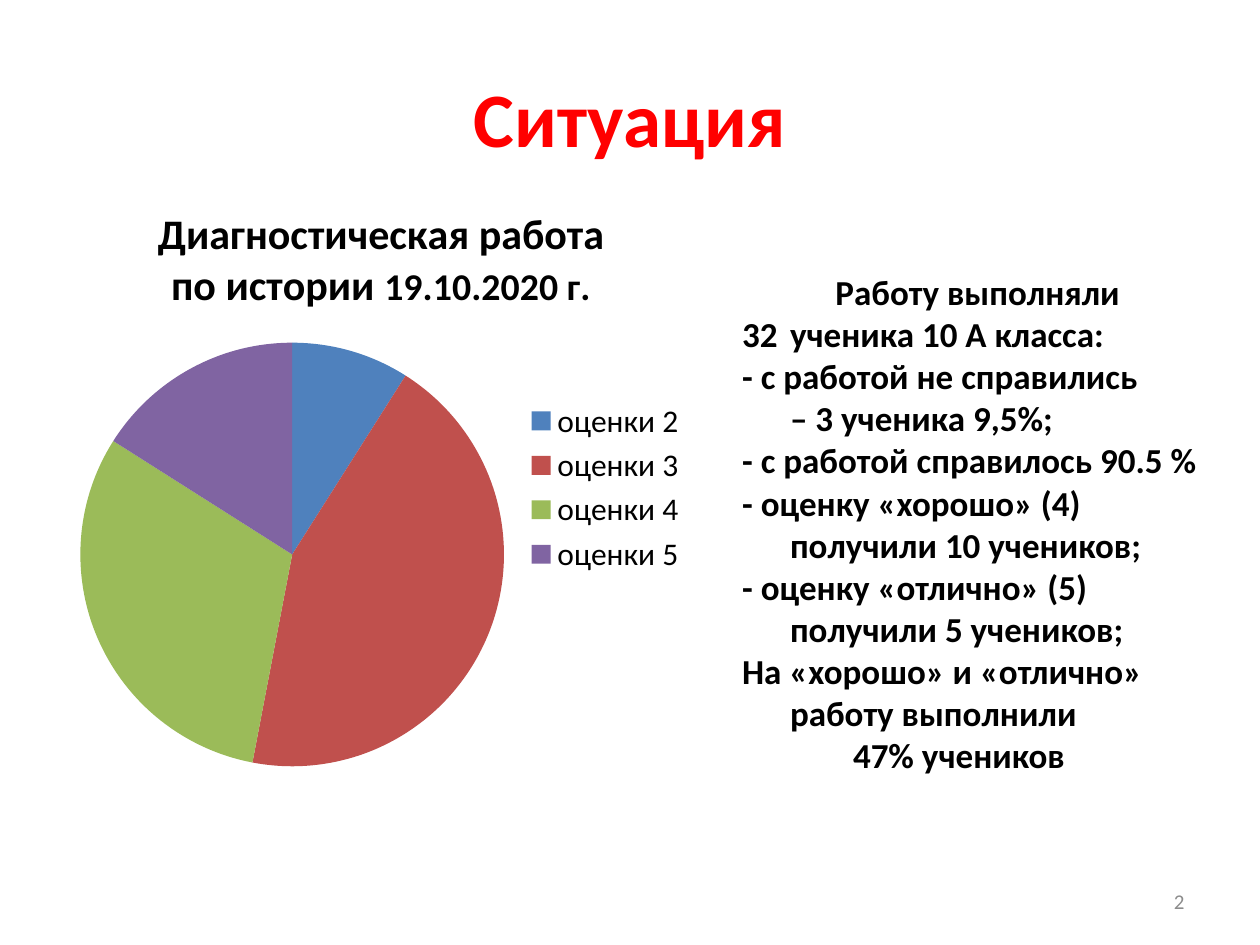
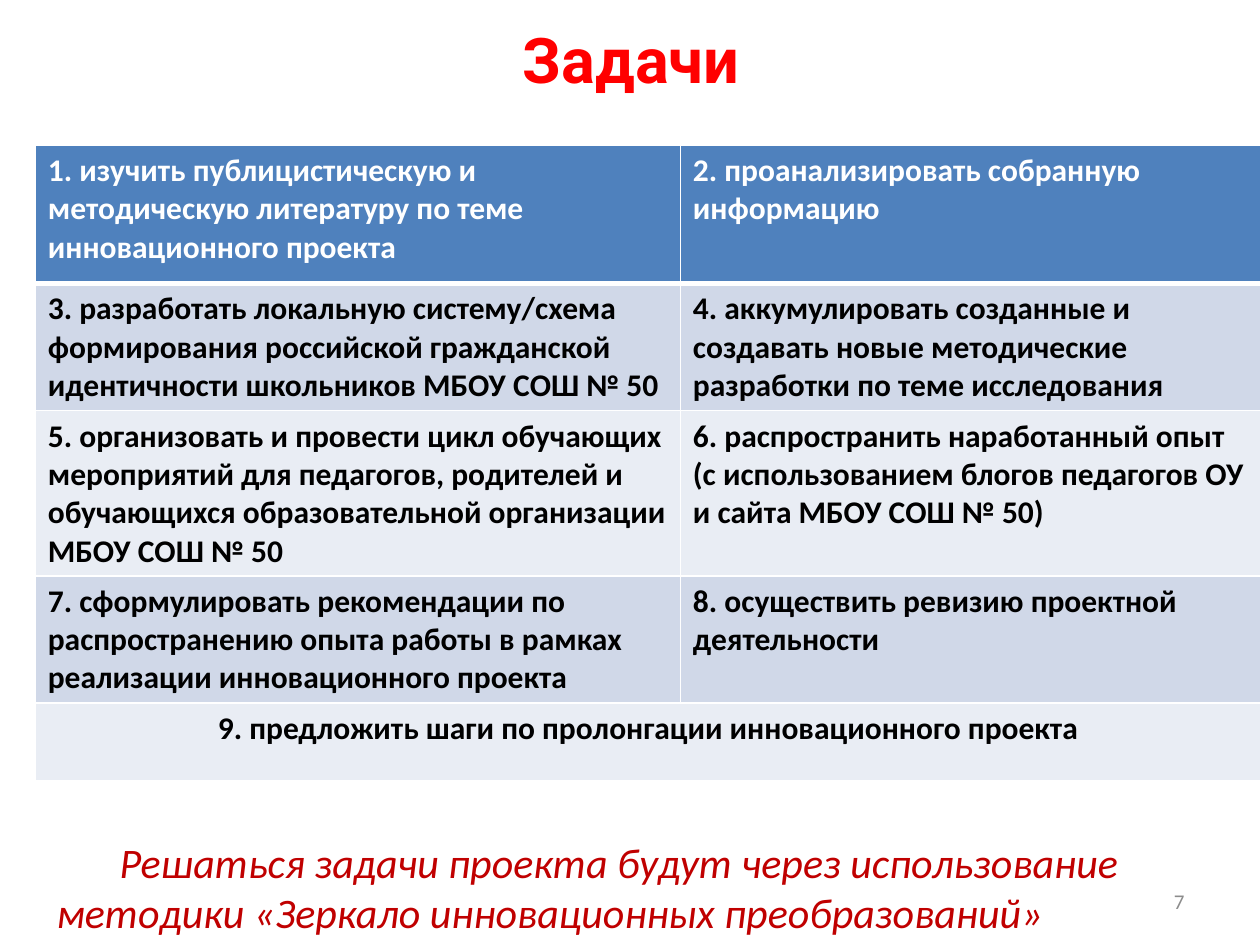
from dataclasses import dataclass

from lxml.etree import SubElement
from pptx import Presentation
from pptx.chart.data import CategoryChartData
from pptx.dml.color import RGBColor as RGB
from pptx.enum.chart import XL_CHART_TYPE as ChartType, XL_LEGEND_POSITION as LegendPos
from pptx.enum.text import MSO_ANCHOR as Anchor, MSO_AUTO_SIZE as AutoSize, PP_ALIGN as Align
from pptx.oxml.ns import qn
from pptx.util import Inches, Pt


@dataclass(frozen=True)
class Theme:
    font: str = "Calibri"
    alt_font: str = "Roboto"
    title: str = "FF0000"
    text: str = "000000"
    white: str = "FFFFFF"
    note: str = "C00000"
    page: str = "8C8C8C"
    header: str = "4F81BD"
    bands: tuple = ("D0D8E8", "E9EDF4")
    slices: tuple = ("4F81BD", "C0504D", "9BBB59", "8064A2")
    chart_title_size: float = 24
    chart_date_size: float = 21.6
    chart_size: float = 18
    list_size: float = 20
    table_size: float = 18
    note_size: float = 24
    page_size: float = 12


T = Theme()
TITLE_AND_BODY, TITLE_ONLY = 1, 5

RESULTS = {"оценки 2": 9, "оценки 3": 44, "оценки 4": 31, "оценки 5": 16}
SUMMARY_HEAD = "Работу выполняли"
PUPIL_COUNT = 32
SUMMARY = [
    "ученика 10 А класса:",
    "- с работой не справились",
    "\t– 3 ученика 9,5%;",
    "- с работой справилось 90.5 %",
    "- оценку «хорошо» (4)",
    "\tполучили 10 учеников;",
    "- оценку «отлично» (5)",
    "\tполучили 5 учеников;",
    "На «хорошо» и «отлично» работу выполнили",
    "\t\t47% учеников",
]
TASKS = [
    ("1. изучить публицистическую и методическую литературу по теме инновационного проекта",
     "2. проанализировать собранную информацию"),
    ("3. разработать локальную систему/схема формирования российской гражданской "
     "идентичности школьников МБОУ СОШ № 50",
     "4. аккумулировать созданные и создавать новые методические разработки по теме исследования"),
    ("5. организовать и провести цикл обучающих мероприятий для педагогов, родителей и "
     "обучающихся образовательной организации МБОУ СОШ № 50",
     "6. распространить наработанный опыт\n(с использованием блогов педагогов ОУ и сайта МБОУ СОШ № 50)"),
    ("7. сформулировать рекомендации по распространению опыта работы в рамках "
     "реализации инновационного проекта",
     "8. осуществить ревизию проектной деятельности"),
    ("9. предложить шаги по пролонгации инновационного проекта",),
]
NOTE = ("\tРешаться задачи проекта будут через использование методики "
        "«Зеркало инновационных преобразований»")


# Text helpers
def style_font(font, size, color=T.text, bold=False, italic=False, name=T.font):
    font.name, font.size = name, Pt(size)
    font.bold, font.italic = bold, italic
    font.color.rgb = RGB.from_string(color)


def add_text(p, text, size, align=Align.LEFT, **style):
    p.alignment = align
    for i, line in enumerate(text.split("\n")):
        if i:
            p.add_line_break()
        r = p.add_run()
        r.text = line
        style_font(r.font, size, **style)


def place(sp, left, top, width, height):
    sp.left, sp.top = Inches(left), Inches(top)
    sp.width, sp.height = Inches(width), Inches(height)


def add_box(s, left, top, width, height, anchor=Anchor.TOP):
    tf = s.shapes.add_textbox(*map(Inches, (left, top, width, height))).text_frame
    tf.word_wrap = True
    tf.vertical_anchor = anchor
    return tf


# Shared slide parts
def add_slide(prs, layout, title, box, size, page, font=T.font):
    s = prs.slides.add_slide(prs.slide_layouts[layout])
    sp = s.shapes.title
    place(sp, *box)
    sp.text_frame.vertical_anchor = Anchor.MIDDLE
    add_text(sp.text_frame.paragraphs[0], title, size, Align.CENTER,
             color=T.title, bold=True, name=font)
    tf = add_box(s, 7.17, 6.95, 2.33, 0.4, Anchor.MIDDLE)
    add_text(tf.paragraphs[0], page, T.page_size, Align.RIGHT, color=T.page)
    return s


# Pie chart of marks
def add_marks_chart(s):
    data = CategoryChartData()
    data.categories = list(RESULTS)
    data.add_series("Series 1", list(RESULTS.values()))
    chart = s.shapes.add_chart(ChartType.PIE, Inches(0.5), Inches(1.47),
                               Inches(5.05), Inches(4.8), data).chart
    style_font(chart.font, T.chart_size)
    tf = chart.chart_title.text_frame
    add_text(tf.paragraphs[0], "Диагностическая работа", T.chart_title_size,
             Align.CENTER, bold=True)
    p = tf.add_paragraph()
    add_text(p, "по истории ", T.chart_title_size, Align.CENTER, bold=True)
    add_text(p, "19.10.2020 г.", T.chart_date_size, Align.CENTER, bold=True)
    chart.chart_title.include_in_layout = False
    chart.has_legend = True
    chart.legend.position = LegendPos.RIGHT
    chart.legend.include_in_layout = False
    plot = chart.plots[0]
    plot.vary_by_categories = True
    for i, color in enumerate(T.slices):
        fill = plot.series[0].points[i].format.fill
        fill.solid()
        fill.fore_color.rgb = RGB.from_string(color)


# Hanging list of results
def set_marker(p, indent=0, number=None):
    pPr = p._p.get_or_add_pPr()
    pPr.set("marL", str(Inches(indent)))
    pPr.set("indent", str(-Inches(indent)))
    if number is None:
        SubElement(pPr, qn("a:buNone"))
    else:
        SubElement(pPr, qn("a:buFont"), typeface="+mj-lt")
        SubElement(pPr, qn("a:buAutoNum"), type="arabicPlain", startAt=str(number))


def add_summary(s):
    sp = s.placeholders[1]
    place(sp, 5.79, 2.1, 3.94, 4.14)
    tf = sp.text_frame
    tf.auto_size = AutoSize.SHAPE_TO_FIT_TEXT
    p = tf.paragraphs[0]
    p.space_before = Pt(0)
    set_marker(p)
    add_text(p, SUMMARY_HEAD, T.list_size, Align.CENTER, bold=True)
    for i, line in enumerate(SUMMARY):
        p = tf.add_paragraph()
        p.space_before = Pt(0)
        set_marker(p, 0.38, None if i else PUPIL_COUNT)
        add_text(p, line, T.list_size, bold=True)


# Table of tasks
def set_borders(cell, bottom):
    tcPr = cell._tc.get_or_add_tcPr()
    for side, width in (("L", 1), ("R", 1), ("T", 1), ("B", bottom)):
        ln = SubElement(tcPr, qn(f"a:ln{side}"), w=str(Pt(width)))
        SubElement(SubElement(ln, qn("a:solidFill")), qn("a:srgbClr"), val=T.white)


def add_tasks_table(s):
    widths, heights = (5.12, 4.61), (1.1, 1.01, 1.31, 1.01, 0.62)
    table = s.shapes.add_table(len(heights), len(widths), Inches(0.28), Inches(1.15),
                               Inches(sum(widths)), Inches(sum(heights))).table
    for col, width in zip(table.columns, widths):
        col.width = Inches(width)
    for i, (texts, height) in enumerate(zip(TASKS, heights)):
        table.rows[i].height = Inches(height)
        merged = len(texts) < len(widths)
        if merged:
            table.cell(i, 0).merge(table.cell(i, 1))
        for j in range(len(widths)):
            cell = table.cell(i, j)
            set_borders(cell, 1 if i else 3)
            cell.fill.solid()
            cell.fill.fore_color.rgb = RGB.from_string(T.bands[(i - 1) % 2] if i else T.header)
            if j < len(texts):
                add_text(cell.text_frame.paragraphs[0], texts[j], T.table_size,
                         Align.CENTER if merged else Align.LEFT,
                         color=T.text if i else T.white, bold=True)


def add_note(s):
    tf = add_box(s, 0.35, 6.59, 9.45, 0.91)
    tf.auto_size = AutoSize.SHAPE_TO_FIT_TEXT
    add_text(tf.paragraphs[0], NOTE, T.note_size, color=T.note, italic=True)


def main():
    prs = Presentation()
    prs.slide_width, prs.slide_height = Inches(10), Inches(7.5)

    s = add_slide(prs, TITLE_AND_BODY, "Ситуация", (0.5, 0.3, 9, 1.25), 44, "2")
    add_marks_chart(s)
    add_summary(s)

    s = add_slide(prs, TITLE_ONLY, "Задачи", (0.51, 0, 9, 0.93), 36, "7", T.alt_font)
    add_tasks_table(s)
    add_note(s)

    prs.save("out.pptx")


if __name__ == "__main__":
    main()
